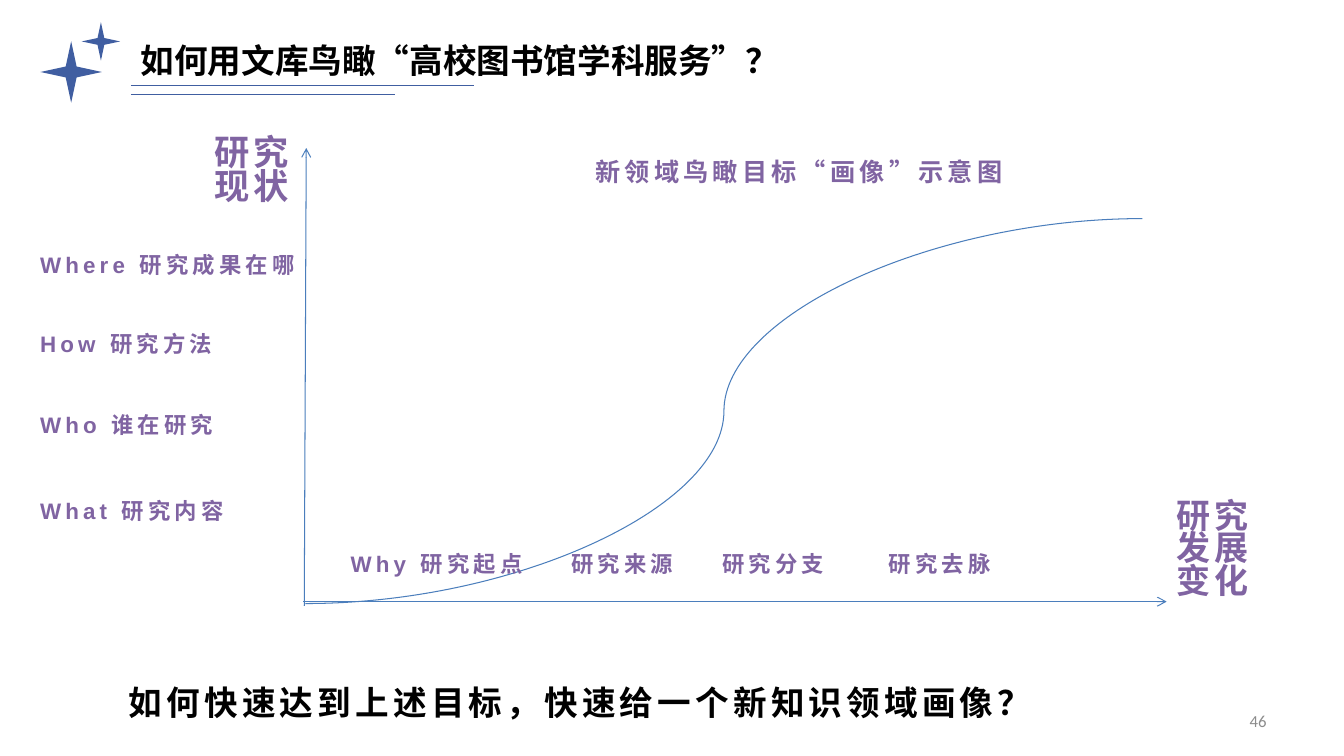
from pptx import Presentation
from pptx.dml.color import RGBColor
from pptx.enum.shapes import MSO_CONNECTOR, MSO_SHAPE
from pptx.enum.text import MSO_ANCHOR, PP_ALIGN
from pptx.oxml.ns import qn
from pptx.util import Cm, Pt
from lxml import etree

PURPLE = RGBColor(0x80, 0x64, 0xA2)
BLACK = RGBColor(0, 0, 0)
GREY = RGBColor(0x8C, 0x8C, 0x8C)
AXIS_BLUE = RGBColor(0x4B, 0x7E, 0xBC)
STAR_BLUE = RGBColor(0x40, 0x5E, 0xA1)

STRAIGHT, CURVE = MSO_CONNECTOR.STRAIGHT, MSO_CONNECTOR.CURVE
STAR = MSO_SHAPE.STAR_4_POINT
TOP, MIDDLE = MSO_ANCHOR.TOP, MSO_ANCHOR.MIDDLE
LEFT, RIGHT = PP_ALIGN.LEFT, PP_ALIGN.RIGHT
CJK = "Noto Sans CJK SC"


def add_text(s, text, x, y, w, h, size, color=PURPLE, font="Arial", bold=True,
             spacing=3, line_spacing=None, align=LEFT, anchor=MIDDLE):
    tf = s.shapes.add_textbox(Cm(x), Cm(y), Cm(w), Cm(h)).text_frame
    tf.word_wrap = True
    tf.vertical_anchor = anchor
    p = tf.paragraphs[0]
    p.alignment = align
    if line_spacing:
        p.line_spacing = line_spacing
    r = p.add_run()
    r.text = text
    r.font.name = font
    r.font.size = Pt(size)
    r.font.bold = bold
    r.font.color.rgb = color
    # East Asian font and letter spacing
    rPr = r.font._element
    etree.SubElement(rPr, qn("a:ea")).set("typeface", CJK)
    if spacing:
        rPr.set("spc", str(spacing * 100))


def add_line(s, x1, y1, x2, y2, color=AXIS_BLUE, kind=STRAIGHT, arrow=False):
    line = s.shapes.add_connector(kind, Cm(x1), Cm(y1), Cm(x2), Cm(y2))
    line.line.color.rgb = color
    line.line.width = Pt(0.75)
    spPr = line._element.spPr
    if arrow:
        etree.SubElement(spPr.find(qn("a:ln")), qn("a:tailEnd")).set("type", "arrow")
    etree.SubElement(spPr, qn("a:effectLst"))


def add_star(s, x, y, size):
    sp = s.shapes.add_shape(STAR, Cm(x), Cm(y), Cm(size), Cm(size))
    sp.shadow.inherit = False
    sp.fill.solid()
    sp.fill.fore_color.rgb = STAR_BLUE
    sp.line.fill.background()


def main():
    prs = Presentation()
    prs.slide_width, prs.slide_height = Cm(33.88), Cm(19.05)
    s = prs.slides.add_slide(prs.slide_layouts[6])

    # Title with stars and underlines
    add_star(s, 1.02, 1.04, 1.55)
    add_star(s, 2.06, 0.56, 0.97)
    add_text(s, "如何用文库鸟瞰“高校图书馆学科服务”？", 3.3, 0.89, 23.04, 1.27, 24,
             BLACK, CJK, spacing=0, anchor=TOP)
    add_line(s, 3.3, 2.16, 11.96, 2.16, STAR_BLUE)
    add_line(s, 3.3, 2.39, 9.96, 2.39, STAR_BLUE)

    # Axes and growth curve
    add_line(s, 7.67, 15.27, 7.72, 3.73, arrow=True)
    add_line(s, 7.65, 15.16, 29.41, 15.16, arrow=True)
    add_line(s, 7.7, 15.21, 28.8, 5.51, kind=CURVE)

    # Axis names and chart heading
    add_text(s, "研究现状", 5.16, 2.67, 2.57, 3.33, 25.2, line_spacing=0.8)
    add_text(s, "研究发展变化", 29.41, 12.22, 2.57, 3.33, 24.3, line_spacing=0.8)
    add_text(s, "新领域鸟瞰目标“画像”示意图", 14.76, 3.35, 18, 1.96, 18)

    # Questions along the vertical axis
    for text, y in (("Where 研究成果在哪", 5.69), ("How 研究方法", 7.67),
                    ("Who 谁在研究", 9.73), ("What 研究内容", 11.89)):
        add_text(s, text, 0.76, y, 10, 1.96, 16)

    # Stages along the horizontal axis
    for text, x in (("Why 研究起点", 8.59), ("研究来源", 14.15),
                    ("研究分支", 17.96), ("研究去脉", 22.15)):
        add_text(s, text, x, 13.22, 6.65, 1.96, 16)

    # Closing question and page number
    add_text(s, "如何快速达到上述目标，快速给一个新知识领域画像？", 3, 16.71, 30.48, 1.96,
             24, BLACK, CJK)
    add_text(s, "46", 24.28, 17.65, 7.9, 1.02, 12, GREY, "Calibri", bold=False,
             spacing=0, align=RIGHT)

    prs.save("out.pptx")


if __name__ == "__main__":
    main()
